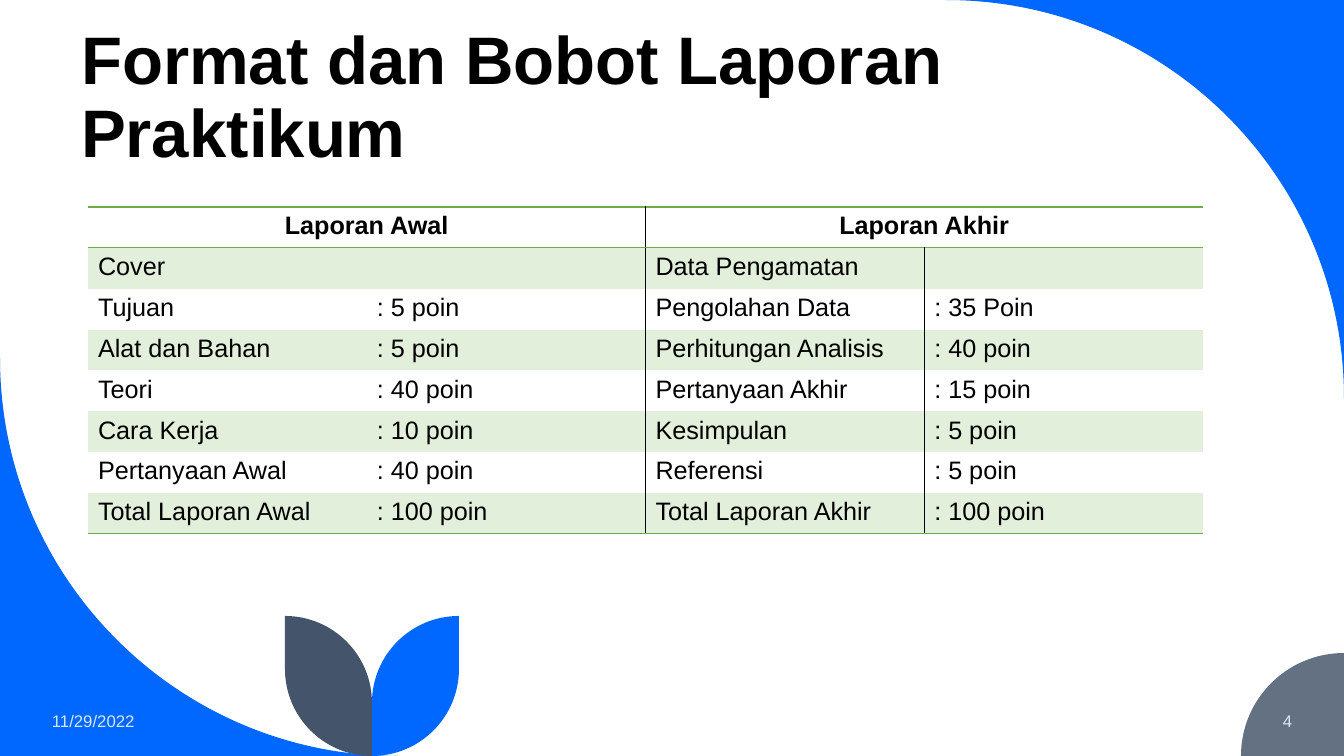
import pptx
import pptx.dml.color
import pptx.enum.text
import pptx.oxml
import pptx.oxml.ns
import pptx.util

EMU_PER_PX = 914400 / 100.8
CURVE = 0.5523  # control point distance of a quarter circle, in radii
NO_GRID_STYLE = "{2D5ABB26-0587-4C30-8999-92F81FD0307C}"
ALIGN = pptx.enum.text.PP_ALIGN
ANCHOR = pptx.enum.text.MSO_ANCHOR

BLUE, SLATE, GREY, PALE = "0068FF", "44546A", "637183", "DAE5EF"
BLACK, GREEN, LIGHT_GREEN = "000000", "70AD47", "E2EFDA"

HEADINGS = ["Laporan Awal", "Laporan Akhir"]
ROWS = [
    ["Cover", "", "Data Pengamatan", ""],
    ["Tujuan", ": 5 poin", "Pengolahan Data", ": 35 Poin"],
    ["Alat dan Bahan", ": 5 poin", "Perhitungan Analisis", ": 40 poin"],
    ["Teori", ": 40 poin", "Pertanyaan Akhir", ": 15 poin"],
    ["Cara Kerja", ": 10 poin", "Kesimpulan", ": 5 poin"],
    ["Pertanyaan Awal", ": 40 poin", "Referensi", ": 5 poin"],
    ["Total Laporan Awal", ": 100 poin", "Total Laporan Akhir", ": 100 poin"],
]


def px(length):
    return pptx.util.Emu(round(length * EMU_PER_PX))


def color(value):
    return pptx.dml.color.RGBColor.from_string(value)


def quarter(start, corner, end):
    """Return the Bezier points of a quarter circle whose tangents meet at corner."""
    def toward_corner(point):
        return tuple(p + CURVE * (c - p) for p, c in zip(point, corner))
    return [toward_corner(start), toward_corner(end), end]


def write(frame, text, size=18, font="Arial", fill=BLACK, bold=False,
          align=ALIGN.LEFT, spacing=None):
    paragraph = frame.paragraphs[0]
    paragraph.alignment = align
    if spacing:
        paragraph.line_spacing = spacing
    if text:
        run = paragraph.add_run()
        run.text = text
        run.font.name = font
        run.font.size = pptx.util.Pt(size)
        run.font.bold = bold
        run.font.color.rgb = color(fill)


def set_border(cell, side, value):
    """Add a 1 pt border; sides of one cell must come in the order L, R, T, B."""
    cell._tc.get_or_add_tcPr().append(pptx.oxml.parse_xml(
        f'<a:ln{side} {pptx.oxml.ns.nsdecls("a")} w="12700"><a:solidFill>'
        f'<a:srgbClr val="{value}"/></a:solidFill></a:ln{side}>'))


class SlideBuilder:
    def __init__(self, presentation):
        self.slide = presentation.slides.add_slide(presentation.slide_layouts[5])

    def title(self, text, left, top, width, height):
        shape = self.slide.shapes.title
        shape.left, shape.top, shape.width, shape.height = map(px, (left, top, width, height))
        frame = shape.text_frame
        frame.word_wrap = True
        frame.auto_size = pptx.enum.text.MSO_AUTO_SIZE.NONE
        frame.vertical_anchor = ANCHOR.BOTTOM
        write(frame, text, size=48, bold=True, spacing=0.9)

    def label(self, text, left, top, width, height, **style):
        frame = self.slide.shapes.add_textbox(*map(px, (left, top, width, height))).text_frame
        frame.word_wrap = True
        frame.vertical_anchor = ANCHOR.MIDDLE
        write(frame, text, **style)

    def outline(self, start, segments, fill):
        """Draw a closed outline; a segment is one point (line) or three (curve)."""
        builder = self.slide.shapes.build_freeform(*map(px, start))
        builder.add_line_segments([(px(x), px(y)) for segment in segments for x, y in segment])
        shape = builder.convert_to_shape()
        lines = iter(shape.element.xpath(".//a:lnTo"))
        for segment in segments:
            parts = [next(lines) for _ in segment]
            if len(parts) == 3:
                curve = pptx.oxml.parse_xml(
                    f'<a:cubicBezTo {pptx.oxml.ns.nsdecls("a")}/>')
                parts[0].addprevious(curve)
                for part in parts:
                    curve.append(part[0])
                    part.getparent().remove(part)
        shape.shadow.inherit = False
        shape.fill.solid()
        shape.fill.fore_color.rgb = color(fill)
        shape.line.fill.background()

    def corner(self, start, tangent_corner, end, tip, fill):
        """Fill the area between a quarter circle and the slide corner at tip."""
        self.outline(start, [quarter(start, tangent_corner, end), [tip], [start]], fill)

    def leaf(self, stem, tip_x, fill):
        bottom, top, width = 756, 616, 87
        tip, shoulder = (tip_x, top), (tip_x, bottom - width)
        base, fork = (stem, bottom), (stem, top + width)
        self.outline(tip, [[shoulder], quarter(shoulder, (tip_x, bottom), base),
                           [fork], quarter(fork, (stem, top), tip)], fill)

    def table(self, headings, rows, left, top, width, height):
        row_count, column_count = len(rows) + 1, len(rows[0])
        graphic_frame = self.slide.shapes.add_table(
            row_count, column_count, *map(px, (left, top, width, height)))
        graphic_frame.element.xpath(".//a:tableStyleId")[0].text = NO_GRID_STYLE
        table = graphic_frame.table
        for index, heading in enumerate(headings):
            first = table.cell(0, 2 * index)
            first.merge(table.cell(0, 2 * index + 1))
            write(first.text_frame, heading, bold=True, align=ALIGN.CENTER)
        for r, texts in enumerate(rows, 1):
            for c, text in enumerate(texts):
                write(table.cell(r, c).text_frame, text)
        for r in range(row_count):
            for c in range(column_count):
                self.format_cell(table.cell(r, c), r, c, r == row_count - 1)

    def format_cell(self, cell, row, column, is_last_row):
        is_header = row == 0
        if column == 2 or (column == 3 and not is_header):
            set_border(cell, "L", BLACK)
        if column == (0 if is_header else 1):
            set_border(cell, "R", BLACK)
        if is_header:
            set_border(cell, "T", GREEN)
        if is_header or is_last_row:
            set_border(cell, "B", GREEN)
        if row % 2:
            cell.fill.solid()
            cell.fill.fore_color.rgb = color(LIGHT_GREEN)
        else:
            cell.fill.background()


def main():
    presentation = pptx.Presentation()
    presentation.slide_width, presentation.slide_height = px(1344), px(756)
    builder = SlideBuilder(presentation)

    builder.corner((1344, 398), (1344, 0), (946, 0), (1344, 0), BLUE)
    builder.corner((0, 358), (0, 756), (398, 756), (0, 756), BLUE)
    builder.corner((1344, 653), (1241, 653), (1241, 756), (1344, 756), GREY)
    builder.leaf(372, 459, BLUE)
    builder.leaf(372, 285, SLATE)

    builder.title("Format dan Bobot Laporan Praktikum", 71, 30, 1157, 147)
    builder.label("11/29/2022", 42, 701, 195, 40, size=12, fill=PALE)
    builder.label("4", 1119, 701, 183, 40, size=12, fill=PALE, align=ALIGN.RIGHT)
    builder.table(HEADINGS, ROWS, 88, 207, 1115, 327)

    presentation.save("out.pptx")


if __name__ == "__main__":
    main()
